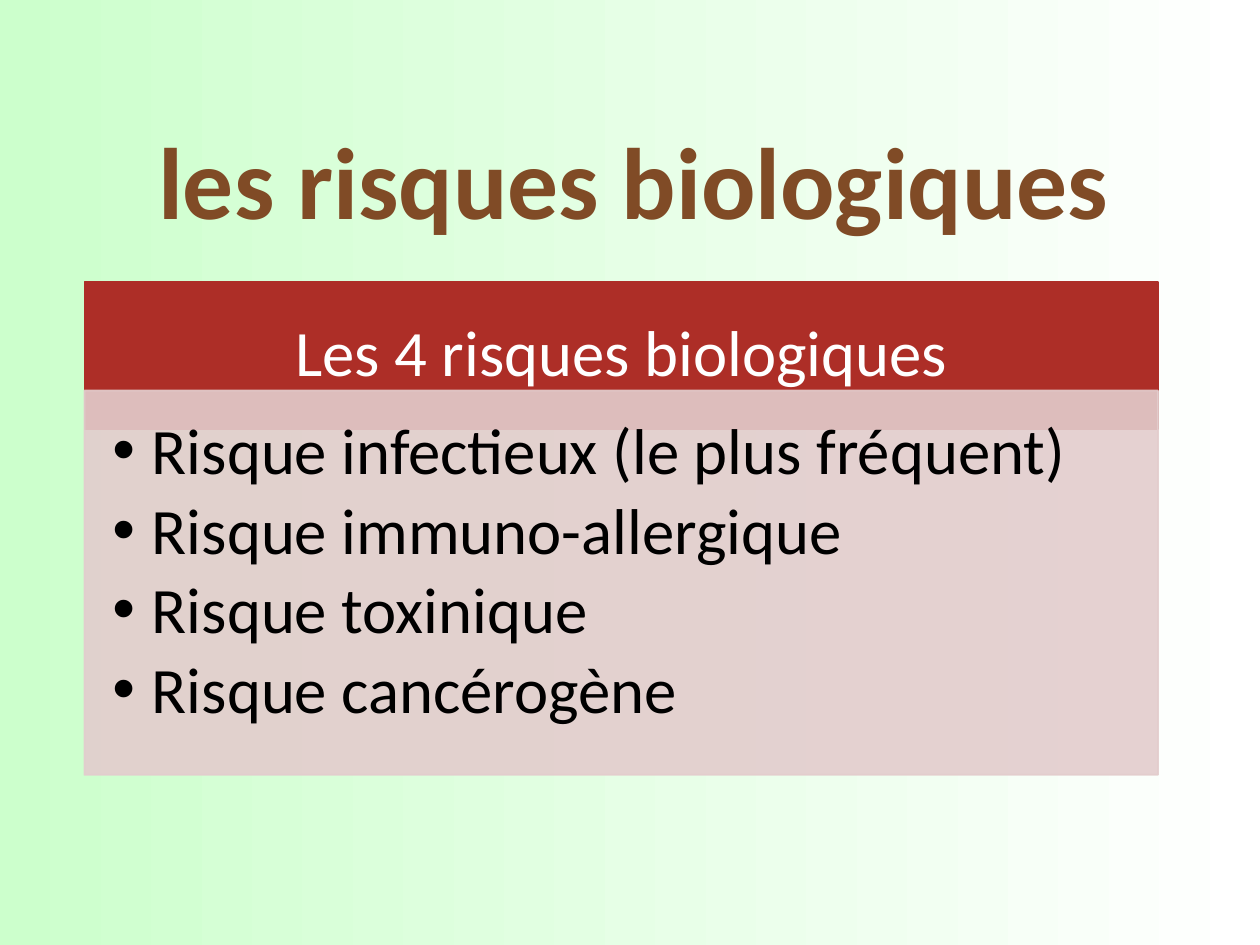
from lxml.etree import SubElement as Sub
from pptx import Presentation
from pptx.dml.color import RGBColor as Rgb
from pptx.enum.shapes import MSO_SHAPE as Kind
from pptx.enum.text import MSO_ANCHOR as Anchor, MSO_AUTO_SIZE as Fit, PP_ALIGN as Align
from pptx.oxml.ns import qn
from pptx.util import Pt

HUES = {
    "mint": "CCFFCC",
    "white": "FFFFFF",
    "brown": "804B26",
    "red": "AD2E27",
    "pink": "E3CDCD",
    "black": "000000",
}
RISKS = [
    "Risque infectieux (le plus fréquent)",
    "Risque immuno-allergique",
    "Risque toxinique",
    "Risque cancérogène",
]
LEFT, WIDE = 48.24, 613.44


def hue(name):
    return Rgb.from_string(HUES[name])


def assign(item, **vals):
    for key, val in vals.items():
        setattr(item, key, val)


def place(shape, x, y, w, h):
    assign(shape, left=Pt(x), top=Pt(y), width=Pt(w), height=Pt(h))


def fade(fill, share):
    for tint in fill.iter(qn("a:srgbClr")):
        Sub(tint, qn("a:alpha"), val=str(share * 1000))


def write(frame, lines, color, size, bold=False, **form):
    frame.text = "\n".join(lines)
    for par in frame.paragraphs:
        assign(par, **form)
        assign(par.runs[0].font, name="Calibri", size=Pt(size), bold=bold)
        par.runs[0].font.color.rgb = hue(color)


def bullet(par, inset):
    props = par._p.get_or_add_pPr()
    props.set("marL", str(Pt(inset)))
    props.set("indent", str(-Pt(inset)))
    Sub(props, qn("a:buFont"), typeface="Arial")
    Sub(props, qn("a:buChar"), char="•")


def paint(slide):
    fill = slide.background.fill
    fill.gradient()
    fill.gradient_angle = 0
    for stop, name, spot in zip(fill.gradient_stops, ("mint", "white"), (0, 1)):
        stop.color.rgb = hue(name)
        stop.position = spot


def head(slide, text):
    title = slide.shapes.title
    place(title, 56, 62, 612, 78.5)
    assign(title.text_frame, vertical_anchor=Anchor.BOTTOM, auto_size=Fit.NONE, word_wrap=True)
    write(title.text_frame, [text], "brown", 58, bold=True, alignment=Align.CENTER)


def panel(slide, y, high, color, anchor, pads):
    box = slide.shapes.add_shape(Kind.RECTANGLE, Pt(LEFT), Pt(y), Pt(WIDE), Pt(high))
    box.shadow.inherit = False
    box.fill.solid()
    box.fill.fore_color.rgb = box.line.color.rgb = hue(color)
    box.line.width = Pt(1)
    sides = ("margin_left", "margin_top", "margin_right", "margin_bottom")
    assign(box.text_frame, vertical_anchor=anchor, word_wrap=True,
           **{side: Pt(pad) for side, pad in zip(sides, pads)})
    return box


def main():
    deck = Presentation()
    assign(deck, slide_width=Pt(720), slide_height=Pt(540))
    slide = deck.slides.add_slide(deck.slide_layouts[5])
    paint(slide)
    head(slide, "les risques biologiques")

    band = panel(slide, 161, 84.24, "red", Anchor.MIDDLE, (21, 11.5, 21, 11.5))
    write(band.text_frame, ["Les 4 risques biologiques"], "white", 37,
          alignment=Align.CENTER, line_spacing=0.9)

    body = panel(slide, 223.2, 219.6, "pink", Anchor.TOP, (16, 16, 21, 23))
    fade(body._element.spPr, 90)
    write(body.text_frame, RISKS, "black", 37,
          alignment=Align.LEFT, line_spacing=0.9, space_after=Pt(5.5))
    for par in body.text_frame.paragraphs:
        bullet(par, 22.5)

    deck.save("out.pptx")


if __name__ == "__main__":
    main()
